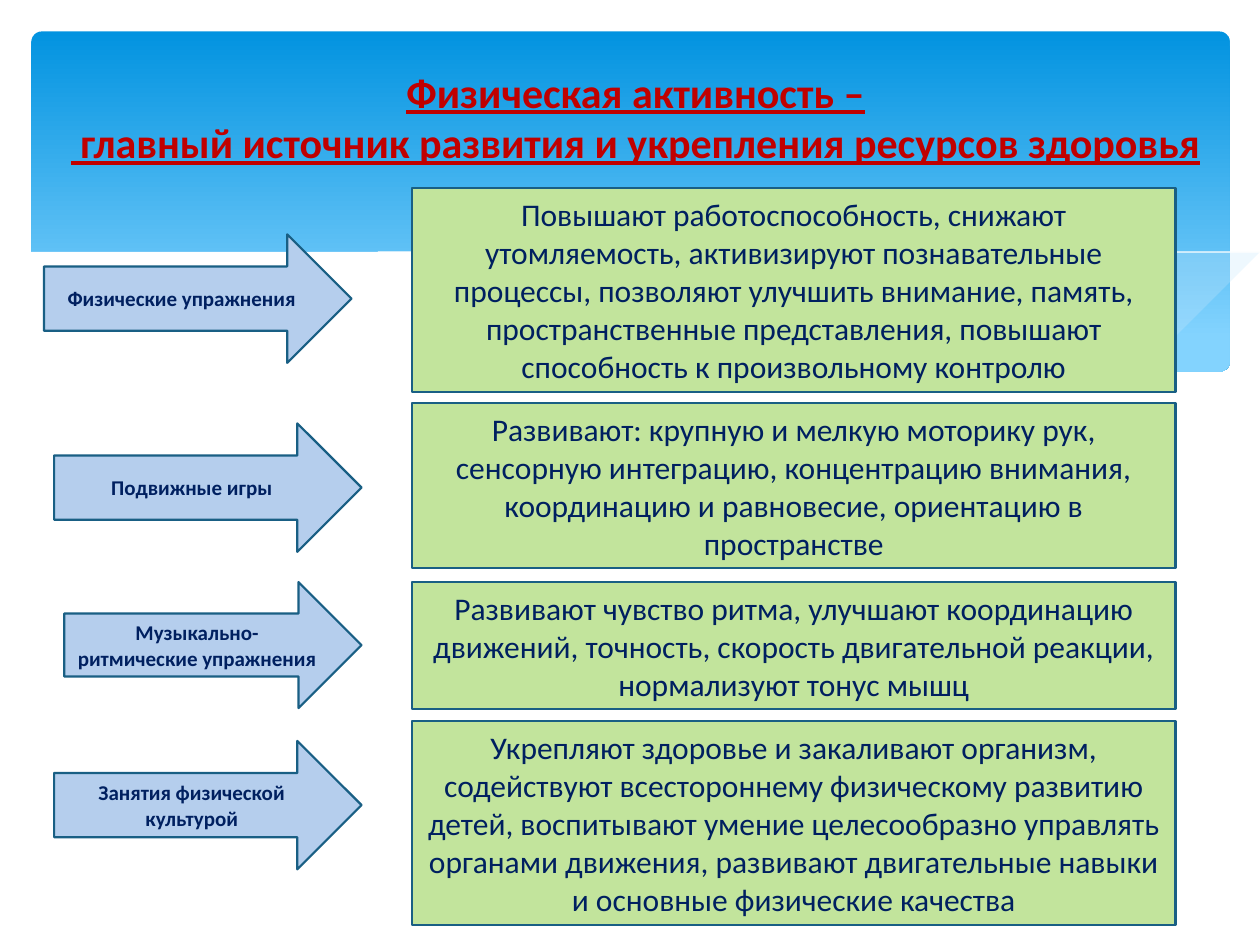
import pptx
import pptx.util
import pptx.dml.color
import pptx.enum.shapes
import pptx.enum.text
import pptx.oxml.ns
import lxml.etree

Inches = pptx.util.Inches
KIND = pptx.enum.shapes.MSO_SHAPE


def tint(code):
    """Turn a hex string into a colour."""
    return pptx.dml.color.RGBColor.from_string(code)


class Deck:
    """Hold the style and the current slide."""
    font, ink, red, edge = "Calibri", "002060", "C00000", "195F84"
    blue, green, mist, white = "B5CEED", "C2E49C", "C6E7FC", "FFFFFF"

    def __init__(self):
        """Open a deck with one title slide."""
        self.file = pptx.Presentation()
        self.file.slide_width = Inches(10)
        self.file.slide_height = Inches(7.5)
        self.slide = self.file.slides.add_slide(self.file.slide_layouts[5])
        self.shapes = self.slide.shapes

    def label(self, shape, text, size, code, bold=False, line=False):
        """Put centred text in a shape."""
        frame = shape.text_frame
        frame.text = text
        frame.word_wrap = True
        frame.auto_size = pptx.enum.text.MSO_AUTO_SIZE.NONE
        frame.vertical_anchor = pptx.enum.text.MSO_ANCHOR.MIDDLE
        for para in frame.paragraphs:
            para.alignment = pptx.enum.text.PP_ALIGN.CENTER
            for run in para.runs:
                run.font.name = self.font
                run.font.size = pptx.util.Pt(size)
                run.font.bold = bold
                run.font.underline = line
                run.font.color.rgb = tint(code)

    def title(self, text, *area):
        """Place the title in front of the backdrop."""
        shape = self.shapes.title
        shape.left, shape.top, shape.width, shape.height = map(Inches, area)
        self.label(shape, text, 24, self.red, True, True)
        shape.element.getparent().append(shape.element)

    def panel(self, *area):
        """Draw the rounded panel with a gradient."""
        shape = self.shapes.add_shape(KIND.ROUNDED_RECTANGLE, *map(Inches, area))
        shape.shadow.inherit = False
        shape.adjustments[0] = 0.03
        shape.line.fill.background()
        shape.fill.gradient()
        shape.fill.gradient_angle = 270
        for stop, place, code in zip(shape.fill.gradient_stops, (0, 0.9), ("0293E0", "83D3FE")):
            stop.position = place
            stop.color.rgb = tint(code)

    def trace(self, points, close):
        """Build an outline through points."""
        pen = self.shapes.build_freeform(*points[0], scale=Inches(1))
        pen.add_line_segments(points[1:], close=close)
        shape = pen.convert_to_shape()
        shape.shadow.inherit = False
        return shape

    def wave(self, points, code, alpha=100):
        """Draw a filled wave."""
        shape = self.trace(points, True)
        shape.line.fill.background()
        shape.fill.solid()
        shape.fill.fore_color.rgb = tint(code)
        if alpha < 100:
            name = pptx.oxml.ns.qn("a:srgbClr")
            node = next(shape.element.spPr.iter(name))
            mark = lxml.etree.SubElement(node, pptx.oxml.ns.qn("a:alpha"))
            mark.set("val", str(alpha * 1000))

    def curve(self, points):
        """Draw a white hairline."""
        shape = self.trace(points, False)
        shape.fill.background()
        shape.line.width = 0
        shape.line.color.rgb = tint(self.white)

    def block(self, kind, area, text, size, fill, bold=False):
        """Draw an outlined shape with text."""
        shape = self.shapes.add_shape(kind, *map(Inches, area))
        shape.shadow.inherit = False
        shape.fill.solid()
        shape.fill.fore_color.rgb = tint(fill)
        shape.line.color.rgb = tint(self.edge)
        shape.line.width = pptx.util.Pt(1.25)
        self.label(shape, text, size, self.ink, bold)

    def arrow(self, area, text):
        """Draw a labelled arrow."""
        self.block(KIND.RIGHT_ARROW, area, text, 12, self.blue, True)

    def box(self, top, high, text):
        """Draw a box in the right column."""
        area = (3.27, top, 6.06, high)
        self.block(KIND.FLOWCHART_PROCESS, area, text, 18, self.green)


RIGHT = [(9.76, 2), (9.48, 2.04), (9.06, 2.13), (8.61, 2.23), (8.05, 2.37),
         (7.53, 2.48), (7.06, 2.57), (6.61, 2.65), (6.91, 2.69), (7.32, 2.74),
         (7.69, 2.77), (8.14, 2.78), (8.54, 2.76), (8.89, 2.72), (9.21, 2.65),
         (9.49, 2.57), (9.76, 2.47)]
MID = [(8.93, 2.73), (8.37, 2.65), (7.75, 2.54), (7.06, 2.4), (6.29, 2.22),
       (5.84, 2.11), (5.41, 2.03), (5.02, 1.96), (4.65, 1.91), (4.2, 1.87),
       (3.8, 1.85), (3.44, 1.86), (3.13, 1.88), (2.86, 1.91), (3.23, 1.96),
       (3.62, 2.03), (4.04, 2.11), (4.49, 2.22), (5.3, 2.4), (6.01, 2.55),
       (6.5, 2.64), (6.95, 2.7), (7.36, 2.75), (7.73, 2.77), (8.18, 2.78),
       (8.57, 2.77)]
LONG = [(3.09, 1.95), (3.28, 1.92), (3.53, 1.89), (3.87, 1.87), (4.33, 1.87),
        (4.69, 1.89), (5.1, 1.92), (5.56, 1.97), (6.08, 2.04), (6.65, 2.13),
        (7.27, 2.26), (7.95, 2.41), (8.69, 2.61), (9.07, 2.72)]
SHORT = [(6.13, 2.57), (6.53, 2.46), (6.95, 2.35), (7.48, 2.23), (8.06, 2.1),
         (8.66, 1.99), (9.1, 1.92), (9.51, 1.87), (9.75, 1.85)]
FRONT = [(9.77, 2.46), (9.5, 2.56), (9.2, 2.65), (8.87, 2.71), (8.5, 2.75),
         (8.09, 2.77), (7.61, 2.75), (7.08, 2.7), (6.48, 2.62), (5.79, 2.5),
         (5.03, 2.33), (4.47, 2.2), (3.91, 2.07), (3.4, 1.97), (2.92, 1.9),
         (2.5, 1.86), (2.11, 1.84), (1.77, 1.84), (1.46, 1.85), (1.19, 1.87),
         (0.95, 1.91), (0.67, 1.97), (0.46, 2.03), (0.23, 2.13), (0.23, 3.29),
         (9.77, 3.29)]
ROWS = [
    ((0.35, 1.86, 2.44, 1.02), "Физические упражнения", 1.49, 1.62,
     "Повышают работоспособность, снижают утомляемость, активизируют "
     "познавательные процессы, позволяют улучшить внимание, память, "
     "пространственные представления, повышают способность к "
     "произвольному контролю"),
    ((0.43, 3.36, 2.44, 1.02), "Подвижные игры", 3.2, 1.31,
     "Развивают: крупную и мелкую моторику рук, сенсорную интеграцию, "
     "концентрацию внимания, координацию и равновесие, ориентацию в "
     "пространстве"),
    ((0.51, 4.62, 2.36, 1), "Музыкально-ритмические упражнения", 4.62, 1.01,
     "Развивают чувство ритма, улучшают координацию движений, точность, "
     "скорость двигательной реакции, нормализуют тонус мышц"),
    ((0.43, 5.88, 2.44, 1.02), "Занятия физической культурой", 5.72, 1.62,
     "Укрепляют здоровье и закаливают организм, содействуют всестороннему "
     "физическому развитию детей, воспитывают умение целесообразно "
     "управлять органами движения, развивают двигательные навыки и "
     "основные физические качества"),
]


def main():
    """Build the slide and save it."""
    deck = Deck()
    deck.panel(0.25, 0.25, 9.51, 2.7)
    deck.wave(RIGHT, deck.mist, 29)
    deck.wave(MID, deck.mist, 40)
    deck.curve(LONG)
    deck.curve(SHORT)
    deck.wave(FRONT, deck.white)
    deck.title("Физическая активность –\v главный источник развития и "
               "укрепления ресурсов здоровья", 0.28, 0.3, 9.53, 1.25)
    for area, name, top, high, text in ROWS:
        deck.arrow(area, name)
        deck.box(top, high, text)
    deck.file.save("out.pptx")


if __name__ == "__main__":
    main()
